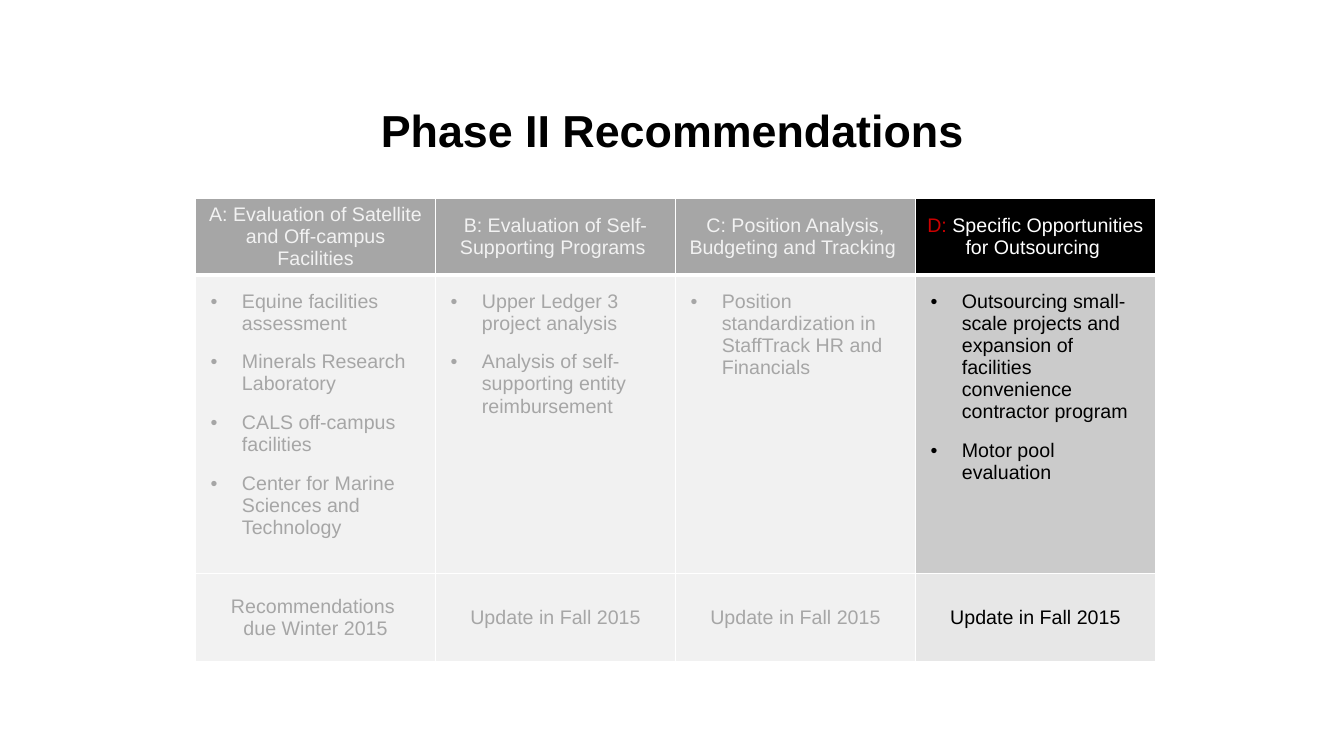
from lxml import etree
from pptx import Presentation
from pptx.dml.color import RGBColor
from pptx.enum.text import MSO_ANCHOR, PP_ALIGN
from pptx.oxml.ns import qn
from pptx.util import Inches, Pt

CENTER, LEFT = PP_ALIGN.CENTER, PP_ALIGN.LEFT
TOP, MIDDLE = MSO_ANCHOR.TOP, MSO_ANCHOR.MIDDLE
TITLE_ONLY = 5

BLACK, WHITE, RED = "000000", "FFFFFF", "CC0000"
MUTED, PALE, LIGHT = "A6A6A6", "F2F2F2", "F1F1F1"

HEADERS = [
    [("A: Evaluation of Satellite and Off-campus Facilities", PALE)],
    [("B: Evaluation of Self-Supporting Programs ", PALE)],
    [("C: Position Analysis, Budgeting and Tracking ", PALE)],
    [("D:", RED), (" Specific Opportunities for Outsourcing ", WHITE)],
]
TOPICS = [
    ["Equine facilities assessment", "Minerals Research Laboratory",
     "CALS off-campus facilities", "Center for Marine Sciences and Technology"],
    ["Upper Ledger 3 project analysis",
     "Analysis of self-supporting entity reimbursement"],
    ["Position standardization in StaffTrack HR and Financials"],
    ["Outsourcing small-scale projects and expansion of facilities "
     "convenience contractor program", "Motor pool evaluation"],
]
UPDATES = ["Recommendations \ndue Winter 2015"] + ["Update in Fall 2015"] * 3

TEXT_COLORS = [MUTED, MUTED, MUTED, BLACK]
HEADER_FILLS = [MUTED, MUTED, MUTED, BLACK]
TOPIC_FILLS = [PALE, LIGHT, LIGHT, "CBCBCB"]
UPDATE_FILLS = [PALE, LIGHT, LIGHT, "E7E7E7"]


def color(value):
    return RGBColor.from_string(value)


def write(para, text, size=14, fill=BLACK, bold=False, font="Arial"):
    """Add text to a paragraph, turning each newline into a line break."""
    for number, line in enumerate(text.split("\n")):
        if number:
            para.add_line_break()
        span = para.add_run()
        span.text = line
        span.font.name = font
        span.font.size = Pt(size)
        span.font.bold = bold
        span.font.color.rgb = color(fill)


def add_bullet(para, indent=0.31):
    properties = para._p.get_or_add_pPr()
    properties.set("marL", str(Inches(indent)))
    properties.set("indent", str(-Inches(indent)))
    etree.SubElement(properties, qn("a:buFont")).set("typeface", "Arial")
    etree.SubElement(properties, qn("a:buChar")).set("char", "•")


def add_borders(cell, widths):
    """Draw white cell edges; widths are points for left, right, top, bottom."""
    properties = cell._tc.get_or_add_tcPr()
    for place, (side, width) in enumerate(zip("LRTB", widths)):
        line = etree.Element(qn(f"a:ln{side}"), w=str(Pt(width)))
        fill = etree.SubElement(line, qn("a:solidFill"))
        etree.SubElement(fill, qn("a:srgbClr")).set("val", WHITE)
        properties.insert(place, line)


class SlideBuilder:
    def __init__(self, deck):
        self.page = deck.slides.add_slide(deck.slide_layouts[TITLE_ONLY])

    def title(self, text, left, top, width, height):
        box = self.page.shapes.title
        box.left, box.top = Inches(left), Inches(top)
        box.width, box.height = Inches(width), Inches(height)
        box.text_frame.vertical_anchor = MIDDLE
        para = box.text_frame.paragraphs[0]
        para.alignment = CENTER
        write(para, text, size=32, bold=True)

    def table(self, left, top, column_width, row_heights, columns):
        frame = self.page.shapes.add_table(
            len(row_heights), columns, Inches(left), Inches(top),
            Inches(column_width * columns), Inches(sum(row_heights)))
        grid = frame.table
        grid.horz_banding = False
        for column in grid.columns:
            column.width = Inches(column_width)
        for row, height in zip(grid.rows, row_heights):
            row.height = Inches(height)
        return grid

    def cell(self, cell, paragraphs, fill, align=CENTER, anchor=MIDDLE,
             space_after=0, bulleted=False, inset=None, bottom=1, above=1):
        """Fill a cell; each paragraph is a list of (text, color) spans."""
        cell.fill.solid()
        cell.fill.fore_color.rgb = color(fill)
        cell.vertical_anchor = anchor
        if inset:
            cell.margin_left = cell.margin_right = Inches(inset)
            cell.margin_top = cell.margin_bottom = Inches(inset)
        add_borders(cell, (1, 1, above, bottom))
        frame = cell.text_frame
        for number, spans in enumerate(paragraphs):
            para = frame.add_paragraph() if number else frame.paragraphs[0]
            para.alignment = align
            para.space_after = Pt(space_after)
            if bulleted:
                add_bullet(para)
            for text, text_color in spans:
                write(para, text, fill=text_color)


def main():
    deck = Presentation()
    deck.slide_width, deck.slide_height = Inches(13.33), Inches(7.5)
    slide = SlideBuilder(deck)
    slide.title("Phase II Recommendations", 1.67, 0.73, 10, 1.12)

    grid = slide.table(1.94, 1.97, 2.38, [0.76, 2.96, 0.87], len(HEADERS))
    for index, text_color in enumerate(TEXT_COLORS):
        slide.cell(grid.cell(0, index), [HEADERS[index]],
                   HEADER_FILLS[index], bottom=3)
        topics = [[(topic, text_color)] for topic in TOPICS[index]]
        slide.cell(grid.cell(1, index), topics, TOPIC_FILLS[index],
                   align=LEFT, anchor=TOP, space_after=12, bulleted=True,
                   inset=0.15, above=3)
        slide.cell(grid.cell(2, index), [[(UPDATES[index], text_color)]],
                   UPDATE_FILLS[index], space_after=12)
    deck.save("out.pptx")


if __name__ == "__main__":
    main()
